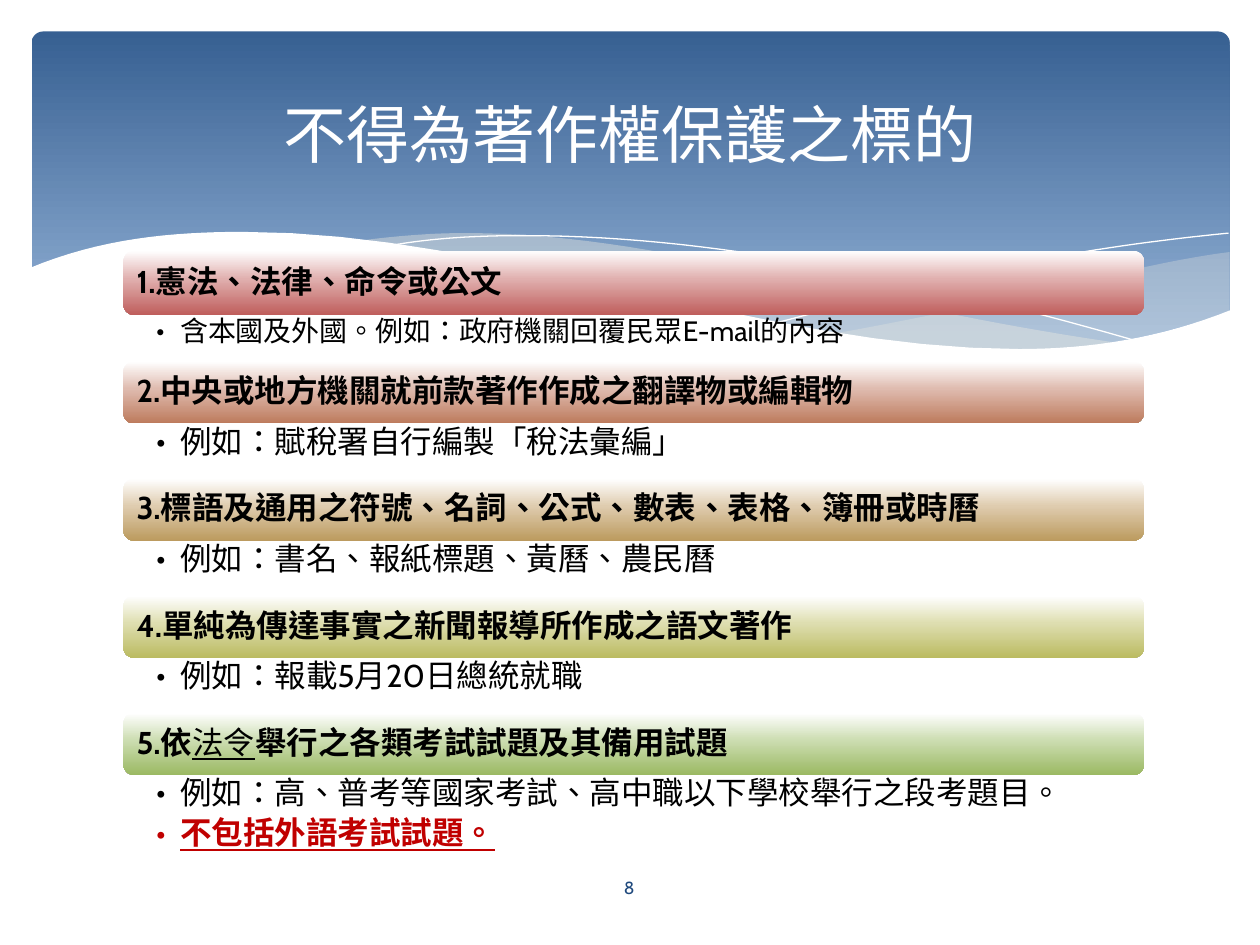
from dataclasses import dataclass
from itertools import pairwise
from lxml.etree import SubElement
from pptx import Presentation
from pptx.dml.color import RGBColor
from pptx.enum.shapes import MSO_SHAPE
from pptx.enum.text import MSO_ANCHOR, PP_ALIGN
from pptx.oxml import parse_xml
from pptx.oxml.ns import nsdecls, qn
from pptx.util import Inches, Pt


@dataclass(frozen=True)
class Theme:
    white: str = "FFFFFF"
    black: str = "000000"
    red: str = "C00000"
    navy: str = "1F497D"
    mist: str = "EEECE1"
    header: tuple = ((0, "376092"), (90, "95B3D7"))
    rose: tuple = ((0, "FFFFFF"), (44, "E0AFAE"), (100, "BF5E5C"))
    clay: tuple = ((0, "FFFFFF"), (44, "DFBBAF"), (100, "BD7B5D"))
    sand: tuple = ((0, "FFFFFF"), (44, "DFCCAF"), (100, "BC9B5F"))
    olive: tuple = ((0, "FFFFFF"), (44, "DEDEB0"), (100, "BBBB61"))
    leaf: tuple = ((0, "FFFFFF"), (44, "CCDDB1"), (100, "9BB963"))
    latin: str = "Cabin"
    east_asian: str = "Noto Sans CJK TC"
    title_size: int = 36
    text_size: int = 18
    small_size: int = 16
    number_size: int = 10


theme = Theme()


def write(para, text, *, size=theme.text_size, color=theme.black, bold=False,
          underline=False, latin=theme.latin, align=PP_ALIGN.LEFT):
    para.alignment = align
    span = para.add_run()
    span.text = text
    font = span.font
    font.size, font.bold, font.underline, font.name = Pt(size), bold, underline, latin
    font.color.rgb = RGBColor.from_string(color)
    properties = font._element
    properties.set("lang", "zh-TW")
    SubElement(properties, qn("a:ea")).set("typeface", theme.east_asian)


def add_gradient_box(left, top, width, height, stops, corner):
    box = page.shapes.add_shape(MSO_SHAPE.ROUNDED_RECTANGLE, Inches(left), Inches(top),
                                Inches(width), Inches(height))
    box.adjustments[0] = corner
    box.shadow.inherit = False
    box.line.fill.background()
    marks = "".join(f'<a:gs pos="{position * 1000}"><a:srgbClr val="{color}"/></a:gs>'
                    for position, color in stops)
    gradient = parse_xml(f'<a:gradFill {nsdecls("a")} rotWithShape="1"><a:gsLst>{marks}</a:gsLst>'
                         '<a:lin ang="5400000" scaled="0"/></a:gradFill>')
    box.element.spPr.find(qn("a:prstGeom")).addnext(gradient)
    return box


deck = Presentation()
deck.slide_width, deck.slide_height = Inches(10), Inches(7.5)
page = deck.slides.add_slide(deck.slide_layouts[5])
page.background.fill.solid()
page.background.fill.fore_color.rgb = RGBColor.from_string(theme.white)

add_gradient_box(0.25, 0.25, 9.51, 2.7, theme.header, 0.034)

# Every edge is a list of knots (x, y, slope), joined by cubic Hermite curves.
right_ribbon = [[(9.76, 2, -0.13), (8.61, 2.23, -0.24), (6.61, 2.65, -0.18)],
                [(6.61, 2.65, 0.14), (8.08, 2.78, 0), (9.76, 2.47, -0.36)]]
middle_ribbon = [[(8.93, 2.73, 0.14), (6.29, 2.22, 0.23), (3.7, 1.85, 0), (2.86, 1.91, -0.13)],
                 [(2.86, 1.91, 0.13), (4.49, 2.22, 0.25), (8.1, 2.78, 0), (8.93, 2.73, -0.1)]]
falling_line = [[(3.09, 1.95, -0.18), (4.16, 1.87, 0), (6.65, 2.13, 0.19), (9.07, 2.72, 0.29)]]
rising_line = [[(6.13, 2.57, -0.26), (8.06, 2.1, -0.21), (9.75, 1.85, -0.1)]]
front_wave = [[(9.77, 2.46, -0.4), (8.09, 2.77, 0), (1.93, 1.84, 0), (0.23, 2.13, -0.42)],
              [(0.23, 3.29, 0), (9.77, 3.29, 0)]]
steps_per_curve = 16

for edges, color, opacity in [
    (right_ribbon, theme.mist, 29),
    (middle_ribbon, theme.mist, 40),
    (falling_line, None, None),
    (rising_line, None, None),
    (front_wave, theme.white, 100),
]:
    points = []
    for edge in edges:
        for (x0, y0, slope0), (x1, y1, slope1) in pairwise(edge):
            run = x1 - x0
            for step in range(steps_per_curve + 1):
                t = step / steps_per_curve
                ease = t * t * (3 - 2 * t)
                bend = t * (1 - t) * ((1 - t) * slope0 - t * slope1)
                points.append((Inches(x0 + run * t),
                               Inches(y0 + (y1 - y0) * ease + run * bend)))
    builder = page.shapes.build_freeform(*points[0])
    builder.add_line_segments(points[1:], close=color is not None)
    wave = builder.convert_to_shape()
    wave.shadow.inherit = False
    if color:
        wave.fill.solid()
        wave.fill.fore_color.rgb = RGBColor.from_string(color)
        shade = wave.element.spPr.find(qn("a:solidFill"))[0]
        SubElement(shade, qn("a:alpha")).set("val", str(opacity * 1000))
        wave.line.fill.background()
    else:
        wave.fill.background()
        wave.line.color.rgb = RGBColor.from_string(theme.white)
        wave.line.width = Pt(0)

strong, linked = {"bold": True}, {"underline": True}
small = {"size": theme.small_size}
excluded = {"bold": True, "underline": True, "color": theme.red}
sections = [
    (theme.rose, 0.51, 0.37,
     [("1.憲法、法律、命令或公文", strong)],
     [("含本國及外國。例如：政府機關回覆民眾E-mail的內容", small)]),
    (theme.clay, 0.49, 0.44,
     [("2.中央或地方機關就前款著作作成之翻譯物或編輯物", strong)],
     [("例如：賦稅署自行編製「稅法彙編」", {})]),
    (theme.sand, 0.49, 0.44,
     [("3.標語及通用之符號、名詞、公式、數表、表格、簿冊或時曆", strong)],
     [("例如：書名、報紙標題、黃曆、農民曆", {})]),
    (theme.olive, 0.49, 0.44,
     [("4.單純為傳達事實之新聞報導所作成之語文著作", strong)],
     [("例如：報載5月20日總統就職", {})]),
    (theme.leaf, 0.49, 0.71,
     [("5.依", strong), ("法令", linked), ("舉行之各類考試試題及其備用試題", strong)],
     [("例如：高、普考等國家考試、高中職以下學校舉行之段考題目。", {}),
      ("不包括外語考試試題。", excluded)]),
]
left, top, width = 0.98, 1.99, 8.1
for stops, bar_height, detail_height, heading, details in sections:
    bar = add_gradient_box(left, top, width, bar_height, stops, 0.17)
    frame = bar.text_frame
    frame.word_wrap = True
    frame.vertical_anchor = MSO_ANCHOR.MIDDLE
    frame.margin_left = frame.margin_right = Inches(0.08)
    para = frame.paragraphs[0]
    para.line_spacing = 0.9
    for text, style in heading:
        write(para, text, **style)

    box = page.shapes.add_textbox(Inches(left), Inches(top + bar_height),
                                  Inches(width), Inches(detail_height))
    frame = box.text_frame
    frame.word_wrap = True
    frame.margin_left, frame.margin_right = Inches(0.26), Inches(0.14)
    frame.margin_top = frame.margin_bottom = Inches(0.02)
    for index, (text, style) in enumerate(details):
        para = frame.add_paragraph() if index else frame.paragraphs[0]
        para.level = 1
        para.line_spacing = 0.9
        para.space_after = Pt(3.6)
        write(para, text, **style)
        properties = para._p.get_or_add_pPr()
        properties.set("marL", str(Inches(0.19)))
        properties.set("indent", str(Inches(-0.19)))
        SubElement(properties, qn("a:buFont")).set("typeface", theme.latin)
        SubElement(properties, qn("a:buChar")).set("char", "•")
    top += bar_height + detail_height

title = page.shapes.title
title.left, title.top = Inches(0.5), Inches(0.37)
title.width, title.height = Inches(9), Inches(1.37)
title.text_frame.vertical_anchor = MSO_ANCHOR.MIDDLE
write(title.text_frame.paragraphs[0], "不得為著作權保護之標的", size=theme.title_size,
      color=theme.white, latin=theme.east_asian, align=PP_ALIGN.CENTER)
page.shapes.element.append(title.element)

number = page.shapes.add_textbox(Inches(4.36), Inches(6.84), Inches(1.27), Inches(0.4))
number.text_frame.word_wrap = True
number.text_frame.vertical_anchor = MSO_ANCHOR.MIDDLE
write(number.text_frame.paragraphs[0], "8", size=theme.number_size, color=theme.navy,
      align=PP_ALIGN.CENTER)

deck.save("out.pptx")
